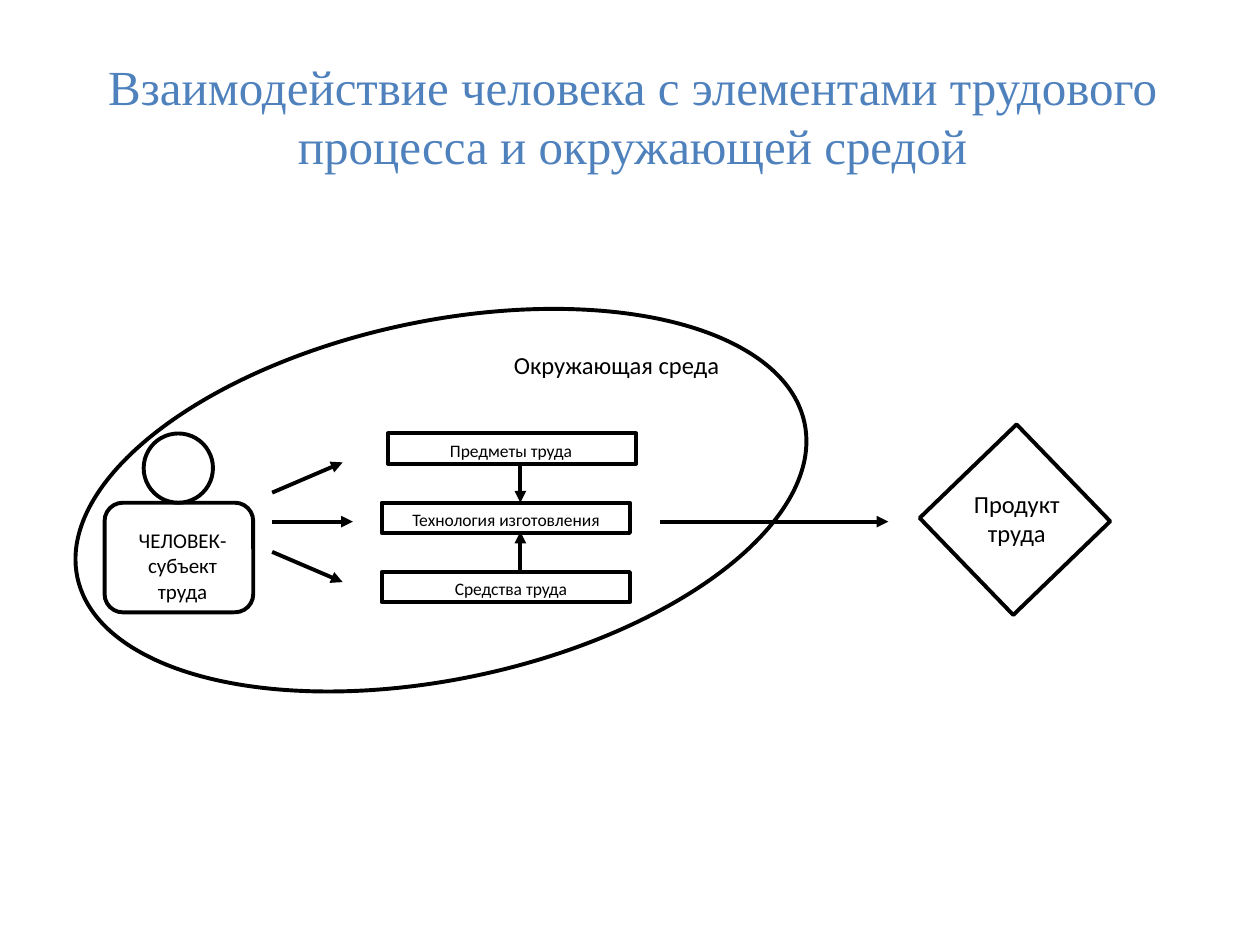
from lxml import etree
from pptx import Presentation
from pptx.dml.color import RGBColor
from pptx.enum.shapes import MSO_CONNECTOR as CONN, MSO_SHAPE as SHAPE
from pptx.enum.text import MSO_ANCHOR as ANCHOR, PP_ALIGN as ALIGN
from pptx.oxml.ns import qn
from pptx.util import Inches, Pt


def color(value):
    return RGBColor.from_string(value)


def write(tf, text, size=10, font="Calibri", fill="000000", align=ALIGN.CENTER, anchor=ANCHOR.TOP):
    tf.word_wrap = True
    tf.vertical_anchor = anchor
    p = tf.paragraphs[0]
    p.alignment = align
    r = p.add_run()
    r.text = text
    r.font.size = Pt(size)
    r.font.name = font
    r.font.color.rgb = color(fill)


prs = Presentation()
prs.slide_width, prs.slide_height = Inches(10), Inches(7.5)
s = prs.slides.add_slide(prs.slide_layouts[5])

title = s.shapes.title
title.left, title.top = Inches(0.52), Inches(0.29)
title.width, title.height = Inches(9), Inches(1.25)
write(title.text_frame, "Взаимодействие человека с элементами трудового процесса и окружающей средой",
      size=28, font="Times New Roman", fill="4F81BD", anchor=ANCHOR.MIDDLE)

row_tops = [3.44 + 0.55 * i for i in range(3)]
outlines = [
    (SHAPE.OVAL, 0.55, 2.55, 5.9, 2.84, 348),
    *[(SHAPE.RECTANGLE, x, y, 1.97, 0.24, 0) for x, y in zip((3.08, 3.03, 3.03), row_tops)],
    (SHAPE.RECTANGLE, 7.52, 3.59, 1.07, 1.07, 46),
    (SHAPE.ROUNDED_RECTANGLE, 0.83, 3.99, 1.18, 0.87, 0),
    (SHAPE.OVAL, 1.14, 3.44, 0.55, 0.55, 0),
]
for kind, x, y, w, h, angle in outlines:
    sp = s.shapes.add_shape(kind, Inches(x), Inches(y), Inches(w), Inches(h))
    sp.rotation = angle
    sp.shadow.inherit = False
    sp.fill.background()
    sp.line.color.rgb = color("000000")
    sp.line.width = Pt(2.25)

arrows = [
    (5.24, 4.14, 7.05, 4.14),
    (4.13, 3.67, 4.13, 3.99),
    (4.13, 4.54, 4.13, 4.22),
    (2.16, 3.91, 2.72, 3.67),
    (2.16, 4.38, 2.72, 4.62),
    (2.16, 4.14, 2.8, 4.14),
]
for x1, y1, x2, y2 in arrows:
    c = s.shapes.add_connector(CONN.STRAIGHT, Inches(x1), Inches(y1), Inches(x2), Inches(y2))
    c.line.color.rgb = color("000000")
    c.line.width = Pt(2.25)
    etree.SubElement(c.line._get_or_add_ln(), qn("a:tailEnd"), type="triangle")
    etree.SubElement(c._element.spPr, qn("a:effectLst"))

labels = [
    ("Окружающая среда", 3.98, 2.73, 2.2, 0.33, 14, ALIGN.LEFT),
    ("ЧЕЛОВЕК-субъект труда", 0.9, 4.14, 1.1, 0.7, 12, ALIGN.CENTER),
    ("Предметы труда", 3.11, row_tops[0], 1.89, 0.27, 10, ALIGN.CENTER),
    ("Технология изготовления", 3.03, row_tops[1], 1.97, 0.27, 10, ALIGN.CENTER),
    ("Средства труда", 3.11, row_tops[2], 1.89, 0.27, 10, ALIGN.CENTER),
    ("Продукт труда", 7.6, 3.83, 0.94, 0.57, 14, ALIGN.CENTER),
]
for text, x, y, w, h, size, align in labels:
    box = s.shapes.add_textbox(Inches(x), Inches(y), Inches(w), Inches(h))
    write(box.text_frame, text, size=size, align=align)

prs.save("out.pptx")
